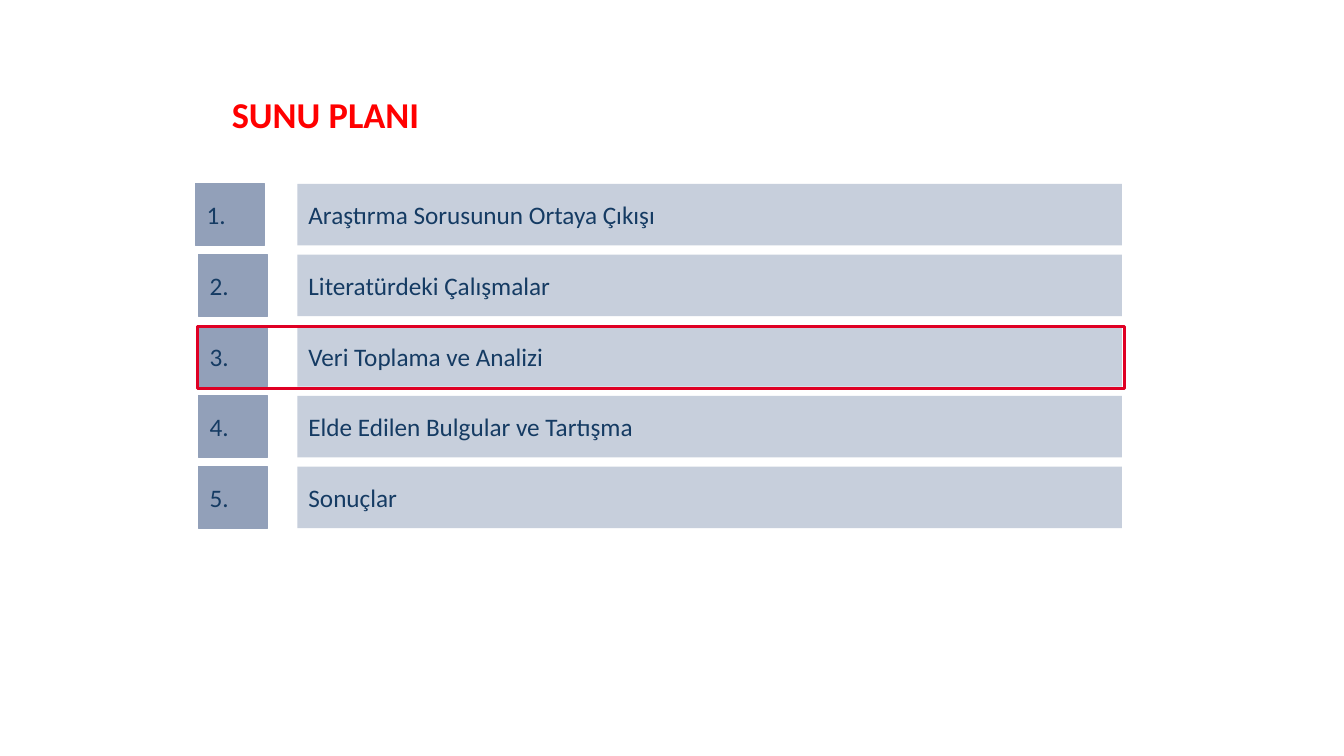
import pptx
import pptx.util
import pptx.dml.color
import pptx.enum.shapes
import pptx.enum.text

Pt = pptx.util.Pt
COLORS = {
    "number": "92A0B9",
    "bar": "C7CFDC",
    "text": "153B63",
    "highlight": "DF0024",
    "title": "FF0000",
}
TOPICS = [
    "Araştırma Sorusunun Ortaya Çıkışı",
    "Literatürdeki Çalışmalar",
    "Veri Toplama ve Analizi",
    "Elde Edilen Bulgular ve Tartışma",
    "Sonuçlar",
]
CURRENT_TOPIC = 3
FIRST_TOP, ROW_PITCH, ROW_HEIGHT = 131.3, 50.5, 44


def add_rectangle(left, top, width, fill=None, line=None, line_width=0.75):
    box = page.shapes.add_shape(
        pptx.enum.shapes.MSO_SHAPE.RECTANGLE,
        Pt(left), Pt(top), Pt(width), Pt(ROW_HEIGHT))
    box.shadow.inherit = False
    for part, color in ((box.fill, fill), (box.line.fill, line)):
        if color:
            part.solid()
            part.fore_color.rgb = pptx.dml.color.RGBColor.from_string(COLORS[color])
        else:
            part.background()
    if line:
        box.line.width = Pt(line_width)
    return box


def write_text(box, text, size, color, margins, bold=False):
    """Put one left-aligned line in the box; margins are (side, top, bottom)."""
    frame = box.text_frame
    frame.text = text
    side, frame.margin_top, frame.margin_bottom = [Pt(margin) for margin in margins]
    frame.margin_left = frame.margin_right = side
    para = frame.paragraphs[0]
    para.alignment = pptx.enum.text.PP_ALIGN.LEFT
    span = para.runs[0]
    span.font.name = "Calibri"
    span.font.size = Pt(size)
    span.font.bold = bold
    span.font.color.rgb = pptx.dml.color.RGBColor.from_string(COLORS[color])


deck = pptx.Presentation()
deck.slide_width, deck.slide_height = Pt(960), Pt(540)
page = deck.slides.add_slide(deck.slide_layouts[6])

title = page.shapes.add_textbox(Pt(165.6), Pt(61.9), Pt(617), Pt(46.8))
write_text(title, "SUNU PLANI", 26, "title", (0, 0.7, 0), bold=True)
title.text_frame.word_wrap = True
title.text_frame.paragraphs[0].line_spacing = 1.11

for number, topic in enumerate(TOPICS, start=1):
    top = FIRST_TOP + (number - 1) * ROW_PITCH
    number_left = 139.7 if number == 1 else 141.8
    number_box = add_rectangle(number_left, top, 49, "number", "number")
    topic_bar = add_rectangle(212.4, top, 589, "bar")
    for box, text in ((number_box, f"{number}."), (topic_bar, topic)):
        write_text(box, text, 18, "text", (7.9, 3.6, 3.6))
        box.text_frame.vertical_anchor = pptx.enum.text.MSO_ANCHOR.MIDDLE
        box.text_frame.word_wrap = box is topic_bar
    if number == CURRENT_TOPIC:
        add_rectangle(141.1, top + 1, 662.4, line="highlight", line_width=2.25)

deck.save("out.pptx")
